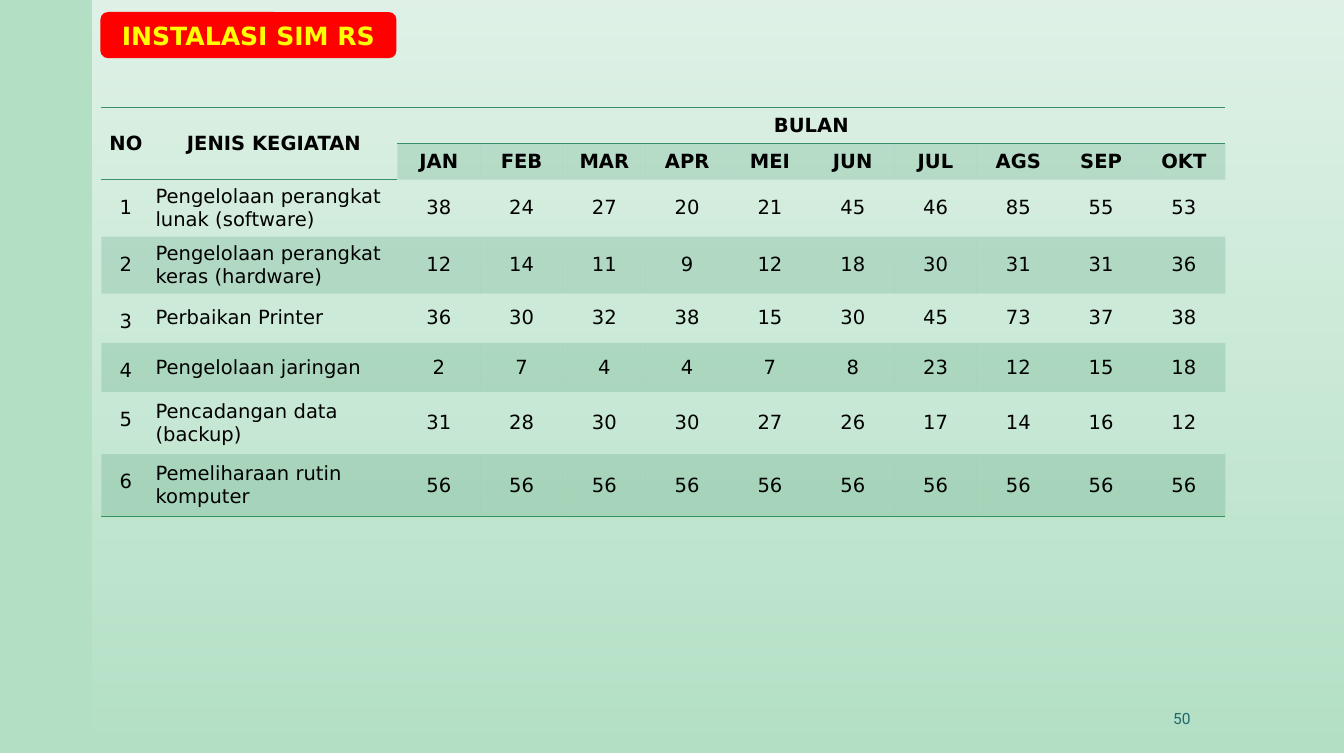
from lxml import etree
from pptx import Presentation
from pptx.dml.color import RGBColor
from pptx.enum.shapes import MSO_SHAPE
from pptx.enum.text import MSO_ANCHOR, PP_ALIGN
from pptx.oxml.ns import qn
from pptx.util import Inches, Pt

LEFT, CENTER, RIGHT = PP_ALIGN.LEFT, PP_ALIGN.CENTER, PP_ALIGN.RIGHT
TOP, MIDDLE = MSO_ANCHOR.TOP, MSO_ANCHOR.MIDDLE
RECTANGLE, ROUNDED = MSO_SHAPE.RECTANGLE, MSO_SHAPE.ROUNDED_RECTANGLE

TITLE = "INSTALASI SIM RS"
PAGE_NUMBER = "50"
MONTHS = ["JAN", "FEB", "MAR", "APR", "MEI", "JUN", "JUL", "AGS", "SEP", "OKT"]
ACTIVITIES = [
    ("Pengelolaan perangkat lunak (software)", [38, 24, 27, 20, 21, 45, 46, 85, 55, 53]),
    ("Pengelolaan perangkat keras (hardware)", [12, 14, 11, 9, 12, 18, 30, 31, 31, 36]),
    ("Perbaikan Printer", [36, 30, 32, 38, 15, 30, 45, 73, 37, 38]),
    ("Pengelolaan jaringan", [2, 7, 4, 4, 7, 8, 23, 12, 15, 18]),
    ("Pencadangan data (backup)", [31, 28, 30, 30, 27, 26, 17, 14, 16, 12]),
    ("Pemeliharaan rutin komputer", [56] * len(MONTHS)),
]
COLORS = {
    "background": "B3E0C5",
    "veil": "FFFFFF",
    "green": "389066",
    "badge": "FF0000",
    "title": "FFFF00",
    "text": "000000",
    "page_number": "1F696F",
}
FONT, NUMBER_FONT = "DejaVu Sans", "Roboto"
NO_STYLE = "{2D5ABB26-0587-4C30-8999-92F81FD0307C}"
COLUMN_WIDTHS = [0.49, 2.46] + [0.825] * len(MONTHS)
ROW_HEIGHTS = [0.36, 0.36, 0.56, 0.56, 0.49, 0.49, 0.62, 0.62]
HEADER_ROWS = 2


def color(name):
    return RGBColor.from_string(COLORS[name])


def set_opacity(element, percent):
    for rgb in element.iter(qn("a:srgbClr")):
        etree.SubElement(rgb, qn("a:alpha")).set("val", str(percent * 1000))


def write(frame, text, align, size, color_name, font=FONT, bold=False):
    frame.text = text
    para = frame.paragraphs[0]
    para.alignment = align
    span = para.runs[0].font
    span.name, span.size, span.bold = font, Pt(size), bold
    span.color.rgb = color(color_name)
    return para


def add_panel(page, kind, left, top, width, height):
    panel = page.shapes.add_shape(
        kind, Inches(left), Inches(top), Inches(width), Inches(height))
    panel.shadow.inherit = False
    panel.line.fill.background()
    return panel


def add_border(cell, tag):
    line = etree.Element(qn(tag), w=str(Pt(1)))
    fill = etree.SubElement(line, qn("a:solidFill"))
    etree.SubElement(fill, qn("a:srgbClr"), val=COLORS["green"])
    cell._tc.get_or_add_tcPr().insert(0, line)


def add_veil(page):
    veil = add_panel(page, RECTANGLE, 0.92, 0, 12.47, 7.5)
    veil.fill.gradient()
    veil.fill.gradient_angle = 270
    stops = veil.fill.gradient_stops
    for stop, position, opacity in zip(stops, (0, 1), (60, 0)):
        stop.position = position
        stop.color.rgb = color("veil")
        set_opacity(stop._gs, opacity)


def add_page_number(page):
    box = page.shapes.add_textbox(Inches(8.84), Inches(6.95), Inches(3.12), Inches(0.4))
    box.text_frame.word_wrap = True
    box.text_frame.vertical_anchor = MIDDLE
    write(box.text_frame, PAGE_NUMBER, RIGHT, 11.1, "page_number", NUMBER_FONT)


def add_activity_table(page):
    grid = [["NO", "JENIS KEGIATAN", "BULAN"] + [""] * (len(MONTHS) - 1),
            ["", ""] + MONTHS]
    for number, (activity, counts) in enumerate(ACTIVITIES, 1):
        grid.append([str(number), activity] + [str(count) for count in counts])

    table = page.shapes.add_table(
        len(grid), len(COLUMN_WIDTHS), Inches(1.01), Inches(1.07),
        Inches(sum(COLUMN_WIDTHS)), Inches(sum(ROW_HEIGHTS))).table
    table.first_row = table.horz_banding = False
    table._tbl.tblPr.find(qn("a:tableStyleId")).text = NO_STYLE
    for column, width in zip(table.columns, COLUMN_WIDTHS):
        column.width = Inches(width)
    for row, height in zip(table.rows, ROW_HEIGHTS):
        row.height = Inches(height)

    for r, texts in enumerate(grid):
        header = r < HEADER_ROWS
        for c, text in enumerate(texts):
            cell = table.cell(r, c)
            cell.margin_left = cell.margin_right = Inches(0.05)
            cell.margin_top = cell.margin_bottom = Inches(0.05)
            numbering = c == 0 and not header
            cell.vertical_anchor = TOP if numbering else MIDDLE
            if text:
                align = LEFT if c == 1 and not header else CENTER
                para = write(cell.text_frame, text, align, 14, "text", bold=header)
                if numbering:
                    para.line_spacing = 1.5
            if r % 2 and (c > 1 or not header):
                cell.fill.solid()
                cell.fill.fore_color.rgb = color("green")
                set_opacity(cell._tc.tcPr, 20)
            else:
                cell.fill.background()
            if r in (0, len(grid) - 1) or (r == 1 and c < 2):
                add_border(cell, "a:lnB")
            if r == 0:
                add_border(cell, "a:lnT")

    for c in (0, 1):
        table.cell(0, c).merge(table.cell(1, c))
    table.cell(0, 2).merge(table.cell(0, len(COLUMN_WIDTHS) - 1))


def add_title(page):
    badge = add_panel(page, ROUNDED, 1, 0.12, 2.95, 0.46)
    badge.fill.solid()
    badge.fill.fore_color.rgb = color("badge")
    badge.text_frame.vertical_anchor = MIDDLE
    write(badge.text_frame, TITLE, CENTER, 18, "title", bold=True)


def main():
    deck = Presentation()
    deck.slide_width, deck.slide_height = Inches(13.39), Inches(7.5)
    page = deck.slides.add_slide(deck.slide_layouts[6])
    page.background.fill.solid()
    page.background.fill.fore_color.rgb = color("background")
    add_veil(page)
    add_page_number(page)
    add_activity_table(page)
    add_title(page)
    deck.save("out.pptx")


if __name__ == "__main__":
    main()
